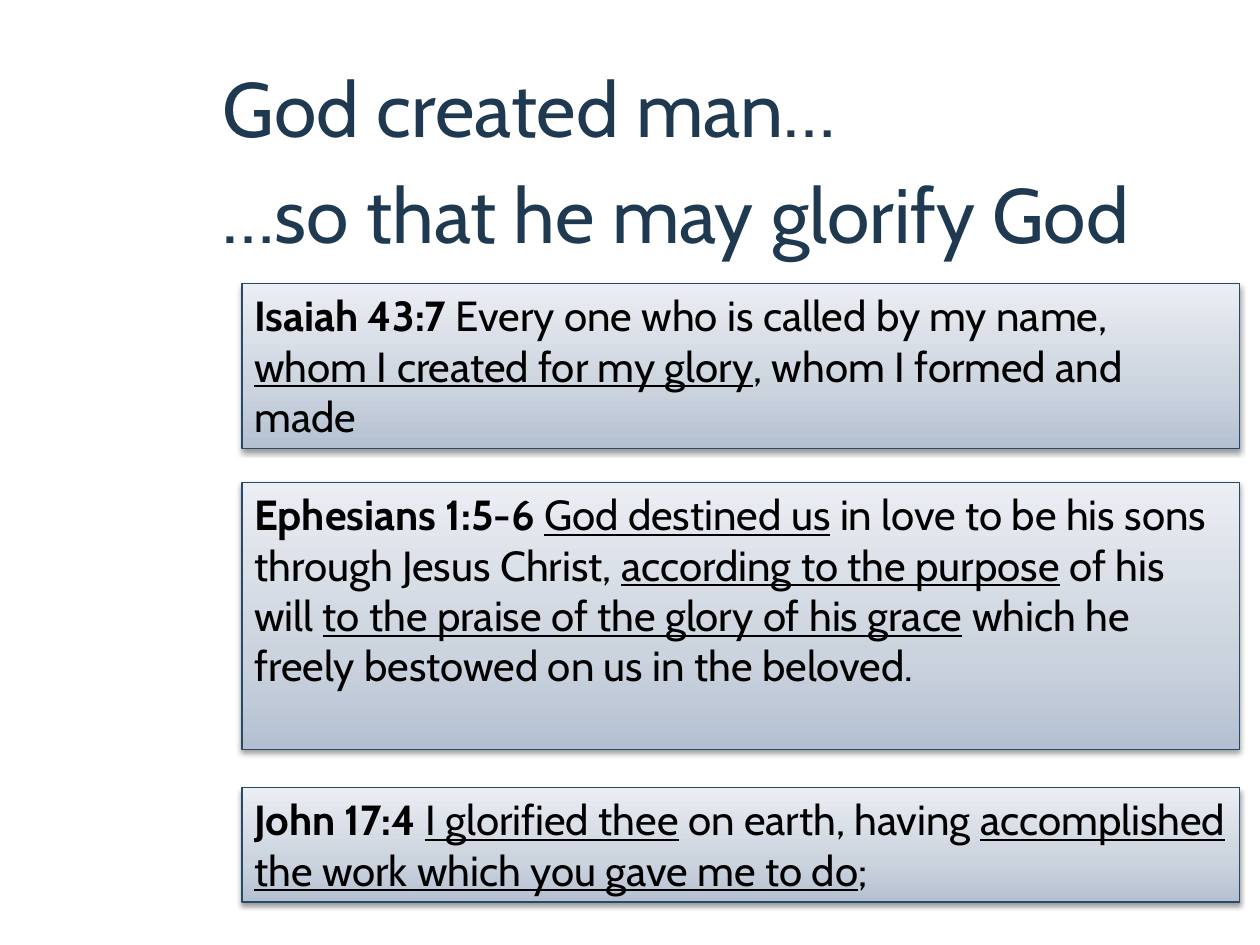
from lxml.etree import SubElement
from pptx import Presentation
from pptx.dml.color import RGBColor
from pptx.enum.shapes import MSO_SHAPE
from pptx.enum.text import MSO_ANCHOR, MSO_AUTO_SIZE, PP_ALIGN
from pptx.oxml.ns import qn
from pptx.util import Inches, Pt

FONT = "Cabin"
COLORS = {
    "heading": "1E3950",
    "text": "000000",
    "border": "264A69",
    "shadow": "000000",
    "dark": "B4C0D1",
    "middle": "CBD3DE",
    "light": "EBEEF3",
}
GRADIENT = [(0, "dark"), (35, "middle"), (100, "light")]  # from the bottom up

HEADINGS = [(0.35, "God created man…"), (1.19, "…so that he may glorify God")]

# Top, height and styled runs: b = bold, u = underlined
VERSES = [
    (2.25, 1.31, [
        ("Isaiah 43:7", "b"),
        (" Every one who is called by my name, ", ""),
        ("whom I created for my glory", "u"),
        (", whom I formed and made", ""),
    ]),
    (3.83, 2.12, [
        ("Ephesians 1:5-6 ", "b"),
        ("God destined us", "u"),
        (" in love to be his sons through Jesus Christ, ", ""),
        ("according to the purpose", "u"),
        (" of his will ", ""),
        ("to the praise of the glory of his grace", "u"),
        (" which he freely bestowed on us in the beloved.", ""),
    ]),
    (6.25, 0.91, [
        ("John 17:4 ", "b"),
        ("I glorified thee", "u"),
        (" on earth, having ", ""),
        ("accomplished the work which you gave me to do", "u"),
        (";", ""),
    ]),
]


def add_span(para, text, size, color, bold=False, underline=False):
    span = para.add_run()
    span.text = text
    font = span.font
    font.name, font.size = FONT, Pt(size)
    font.bold, font.underline = bold, underline
    font.color.rgb = RGBColor.from_string(COLORS[color])


def add_color(parent, color, alpha=None):
    element = SubElement(parent, qn("a:srgbClr"), val=COLORS[color])
    if alpha is not None:
        SubElement(element, qn("a:alpha"), val=str(alpha * 1000))


def fill_gradient(shape):
    shape.fill.gradient()
    shape.fill.gradient_angle = 90
    stops = shape._element.spPr.find(".//" + qn("a:gsLst"))
    for stop in list(stops):
        stops.remove(stop)
    for position, color in GRADIENT:
        add_color(SubElement(stops, qn("a:gs"), pos=str(position * 1000)), color)


def add_shadow(shape):
    shape.shadow.inherit = False
    effects = shape._element.spPr.find(qn("a:effectLst"))
    shadow = SubElement(effects, qn("a:outerShdw"), blurRad=str(Pt(3.1)),
                        dist=str(Pt(1.6)), dir="5400000", rotWithShape="0")
    add_color(shadow, "shadow", alpha=38)


def add_heading(page, top, text):
    box = page.shapes.add_textbox(Inches(1.67), Inches(top), Inches(8.08), Inches(1))
    frame = box.text_frame
    frame.word_wrap = True
    frame.vertical_anchor = MSO_ANCHOR.MIDDLE
    add_span(frame.paragraphs[0], text, size=44, color="heading")


def add_verse(page, top, height, spans):
    box = page.shapes.add_shape(MSO_SHAPE.RECTANGLE, Inches(1.92), Inches(top),
                                Inches(7.92), Inches(height))
    fill_gradient(box)
    box.line.color.rgb = RGBColor.from_string(COLORS["border"])
    box.line.width = Pt(0.75)
    add_shadow(box)
    frame = box.text_frame
    frame.word_wrap = True
    frame.auto_size = MSO_AUTO_SIZE.SHAPE_TO_FIT_TEXT
    frame.vertical_anchor = MSO_ANCHOR.TOP
    para = frame.paragraphs[0]
    para.alignment = PP_ALIGN.LEFT
    for text, style in spans:
        add_span(para, text, size=24, color="text",
                 bold=style == "b", underline=style == "u")


def main():
    deck = Presentation()
    deck.slide_width, deck.slide_height = Inches(10), Inches(7.5)
    page = deck.slides.add_slide(deck.slide_layouts[6])

    # Two-line heading
    for top, text in HEADINGS:
        add_heading(page, top, text)

    # Bible verses
    for top, height, spans in VERSES:
        add_verse(page, top, height, spans)

    deck.save("out.pptx")


if __name__ == "__main__":
    main()
